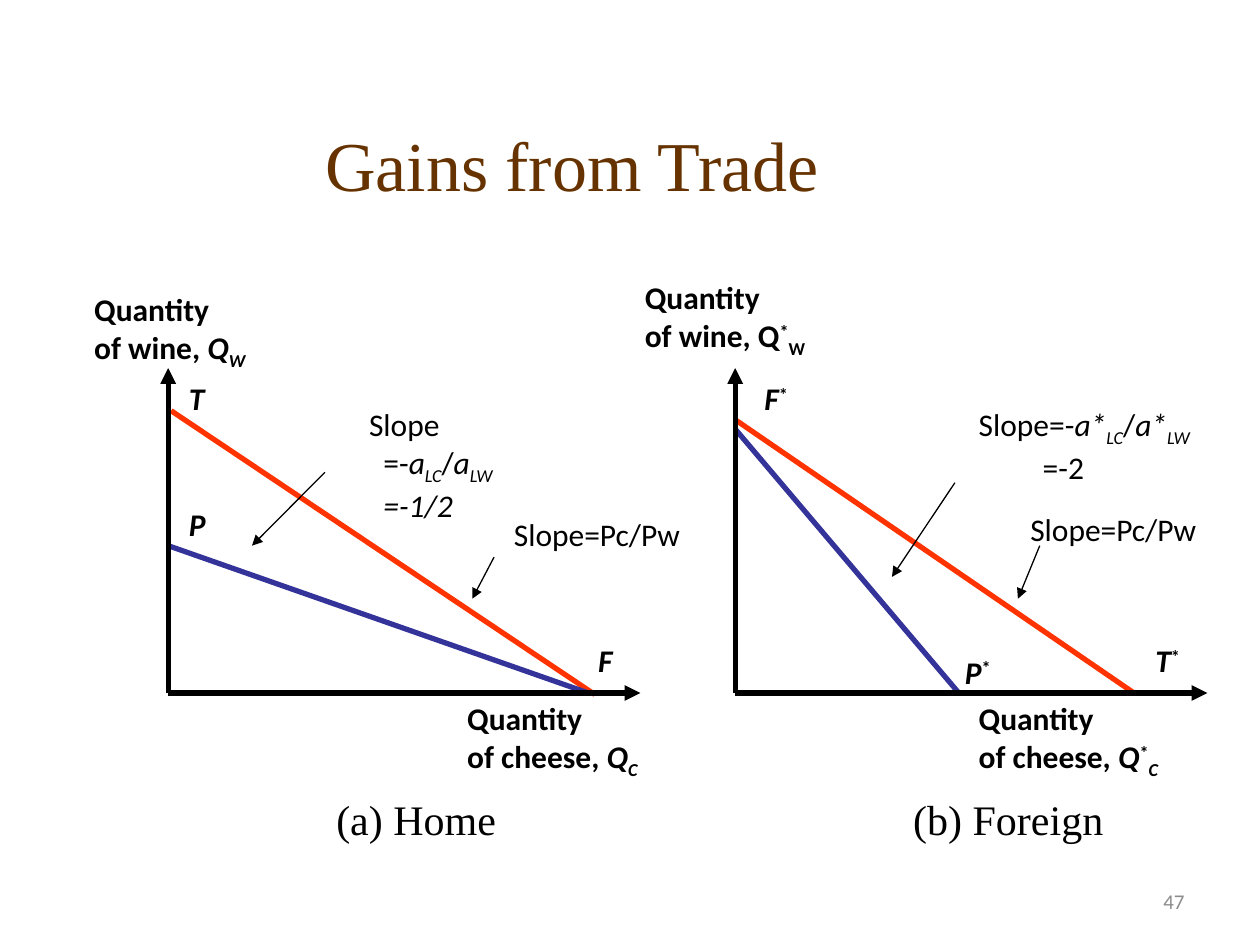
from lxml.etree import SubElement
from pptx import Presentation
from pptx.dml.color import RGBColor
from pptx.enum.shapes import MSO_CONNECTOR as Connector
from pptx.enum.text import MSO_ANCHOR as Anchor, MSO_AUTO_SIZE as AutoSize, PP_ALIGN as Align
from pptx.oxml.ns import qn
from pptx.util import Cm, Pt

THEME = {
    "title": {"name": "Times New Roman", "size": 40, "color": "663300"},
    "caption": {"name": "Times New Roman", "size": 24, "color": "000000"},
    "label": {"name": "Calibri", "size": 18, "color": "000000", "bold": True},
    "point": {"name": "Calibri", "size": 18, "color": "000000", "bold": True, "italic": True},
    "slope": {"name": "Calibri", "size": 18, "color": "000000"},
    "number": {"name": "Calibri", "size": 12, "color": "8C8C8C"},
    "axis": ("000000", 3),
    "trade": ("FF3300", 3),
    "production": ("333399", 3),
    "pointer": ("000000", 0.75),
}
BASELINES = {"^": "30000", "_": "-25000"}
LINE_HEIGHT = 0.76
BOX_MARGIN = 0.26

AXIS_TOP, AXIS_BASE, AXIS_LENGTH = 7.42, 13.97, 9.52
ORIGINS = [3.39, 14.82]

LINES = [
    ("trade", (14.82, 8.46), (22.86, 13.97)),
    ("production", (14.83, 8.66), (19.33, 13.97)),
    ("trade", (3.45, 8.28), (11.99, 14)),
    ("production", (3.39, 11), (11.86, 13.97)),
]
POINTERS = [
    ((19.25, 9.73), (17.98, 11.63)),
    ((20.96, 11), (20.52, 12.07)),
    ((6.55, 9.52), (5.08, 11)),
    ((9.96, 11.23), (9.52, 12.07)),
]

STAR = ("*", "^")
QUANTITY = [("Quantity", "")]
PRICE_SLOPE = [[("Slope=Pc/Pw", "")]]
LABELS = [
    ("point", 23.04, 12.8, 1.07, [[("T", ""), STAR]]),
    ("point", 19.2, 13.03, 1.09, [[("P", ""), STAR]]),
    ("point", 15.16, 7.52, 1.07, [[("F", ""), STAR]]),
    ("point", 3.56, 7.52, 0.89, [[("T", "")]]),
    ("point", 11.81, 12.8, 0.89, [[("F", "")]]),
    ("point", 3.56, 10.06, 0.94, [[("P", "")]]),
    ("label", 12.75, 5.49, 4.11, [QUANTITY, [("of wine, Q", ""), STAR, ("W", "_")]]),
    ("label", 19.48, 13.97, 4.88,
     [QUANTITY, [("of cheese, ", ""), ("Q", "i"), STAR, ("C", "i_")]]),
    ("label", 1.65, 5.72, 3.94, [QUANTITY, [("of wine, ", ""), ("Q", "i"), ("W", "i_")]]),
    ("label", 9.17, 13.97, 4.6, [QUANTITY, [("of cheese, ", ""), ("Q", "i"), ("C", "i_")]]),
    ("caption", 6.53, 15.88, 3.73, [[("(a) Home", "")]]),
    ("caption", 18.16, 15.88, 4.34, [[("(b) Foreign", "")]]),
    ("slope", 10.11, 10.26, 4.29, PRICE_SLOPE),
    ("slope", 20.52, 10.16, 4.29, PRICE_SLOPE),
]
SLOPES = [
    (7.19, 8.05, 5.28, 0.29,
     [[("Slope", "")],
      [("=-", ""), ("a", "i"), ("LC", "i_"), ("/", ""), ("a", "i"), ("LW", "i_")],
      [("=-1/2", "i")]]),
    (19.48, 8.05, 5.92, 1.29,
     [[("Slope=-", ""), ("a*", "i"), ("LC", "i_"), ("/", ""), ("a*", "i"), ("LW", "i_")],
      [("=-2", "")]]),
]


def add_span(para, text, marks, style):
    span = para.add_run()
    span.text = text
    formats = {**THEME[style], "size": Pt(THEME[style]["size"])}
    span.font.color.rgb = RGBColor.from_string(formats.pop("color"))
    if "i" in marks:
        formats["italic"] = True
    elif "^" in marks:
        formats["italic"] = False
    for name, value in formats.items():
        setattr(span.font, name, value)
    for mark in marks:
        if mark in BASELINES:
            span.font._element.set("baseline", BASELINES[mark])


def add_text(page, style, left, top, width, paras, height=None, indent=0,
             wrap=False, align=Align.LEFT, anchor=Anchor.TOP, fit=AutoSize.SHAPE_TO_FIT_TEXT):
    line = LINE_HEIGHT * THEME[style]["size"] / 18
    height = height or len(paras) * line + BOX_MARGIN
    box = page.shapes.add_textbox(Cm(left), Cm(top), Cm(width), Cm(height))
    frame = box.text_frame
    for name, value in {"word_wrap": wrap, "vertical_anchor": anchor, "auto_size": fit}.items():
        setattr(frame, name, value)
    for index, spans in enumerate(paras):
        para = frame.add_paragraph() if index else frame.paragraphs[0]
        para.alignment = align
        if index and indent:
            para._p.get_or_add_pPr().set("marL", str(Cm(indent)))
        for text, marks in spans:
            add_span(para, text, marks, style)


def add_line(page, style, start, end, arrow=False):
    line = page.shapes.add_connector(Connector.STRAIGHT, *map(Cm, start + end))
    color, width = THEME[style]
    line.line.color.rgb = RGBColor.from_string(color)
    line.line.width = Pt(width)
    if arrow:
        SubElement(line.line._get_or_add_ln(), qn("a:tailEnd"), type="triangle")
    SubElement(line._element.spPr, qn("a:effectLst"))


def main():
    deck = Presentation()
    deck.slide_width, deck.slide_height = Cm(25.4), Cm(19.05)
    page = deck.slides.add_slide(deck.slide_layouts[6])
    fixed = {"wrap": True, "anchor": Anchor.MIDDLE, "fit": AutoSize.NONE}
    add_text(page, "number", 18.21, 17.65, 5.92, [[("47", "")]],
             height=1.02, align=Align.RIGHT, **fixed)
    add_text(page, "title", 0, 1.7, 23.06, [[("Gains from Trade", "")]],
             height=3.18, align=Align.CENTER, **fixed)
    for style, start, end in LINES:
        add_line(page, style, start, end)
    for left in ORIGINS:
        origin = (left, AXIS_BASE)
        for end in [(left, AXIS_TOP), (left + AXIS_LENGTH, AXIS_BASE)]:
            add_line(page, "axis", origin, end, arrow=True)
    for start, end in POINTERS:
        add_line(page, "pointer", start, end, arrow=True)
    for style, left, top, width, paras in LABELS:
        add_text(page, style, left, top, width, paras)
    for left, top, width, indent, paras in SLOPES:
        add_text(page, "slope", left, top, width, paras, indent=indent, wrap=True)
    deck.save("out.pptx")


if __name__ == "__main__":
    main()
